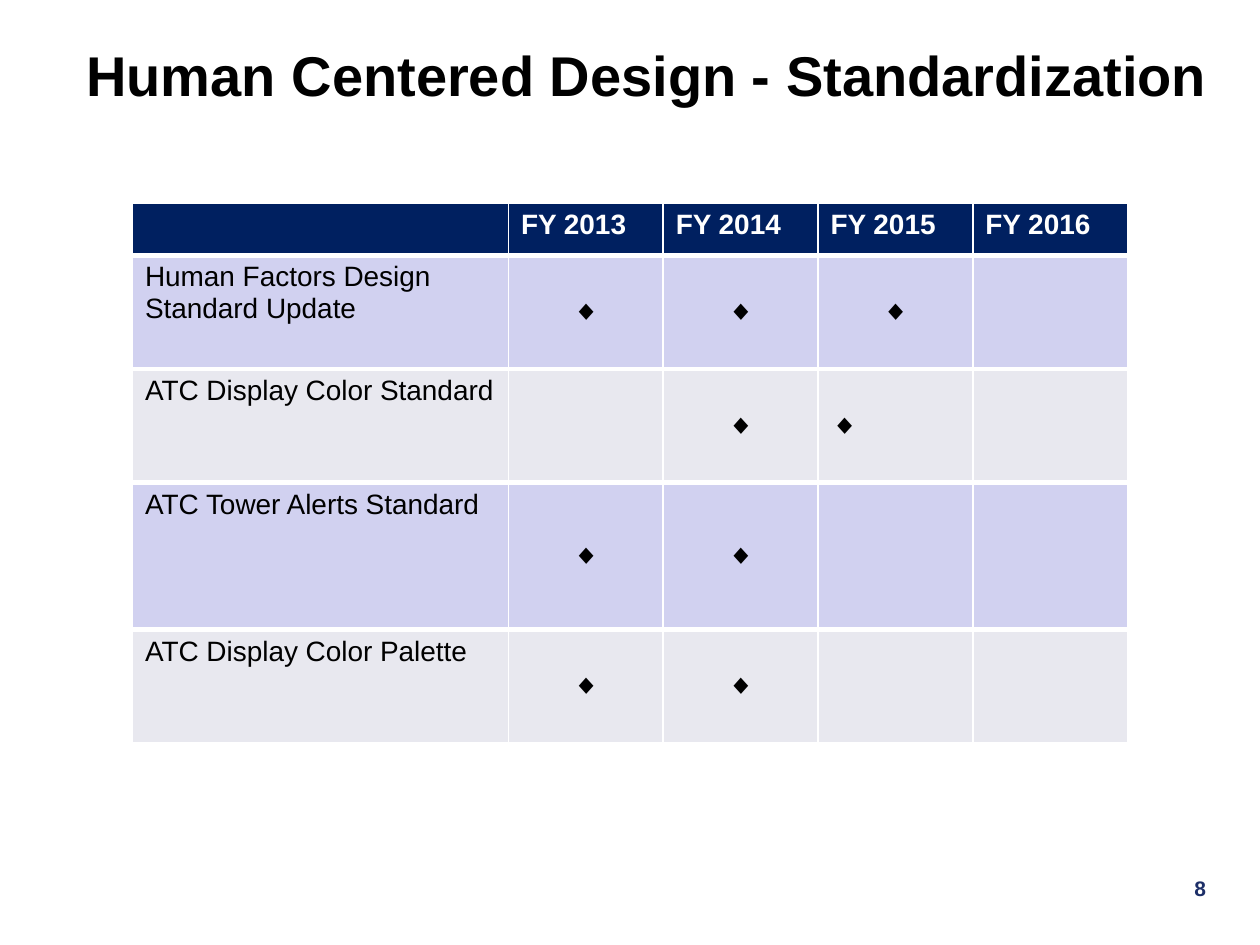
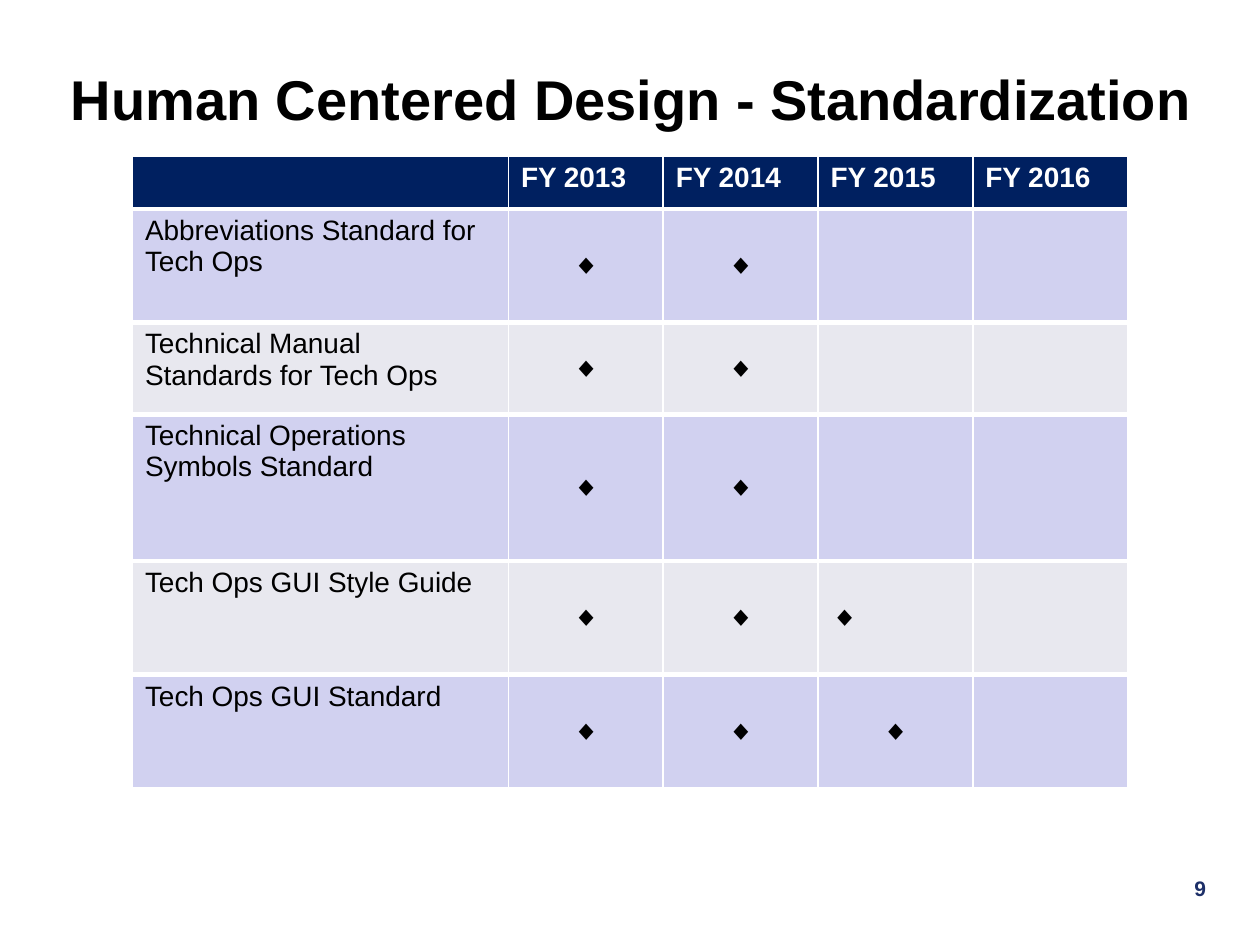
import dataclasses

import lxml.etree
import pptx
import pptx.dml.color
import pptx.enum.text
import pptx.oxml.ns
import pptx.presentation
import pptx.shapes.autoshape
import pptx.slide
import pptx.table
import pptx.text.text
import pptx.util

Cm = pptx.util.Cm
Align = pptx.enum.text.PP_ALIGN
Anchor = pptx.enum.text.MSO_ANCHOR

FONT = "Arial"
BLACK = "000000"
WHITE = "FFFFFF"
NAVY = "002060"
PAGE_BLUE = "1D2F68"
BANDS = ("D1D1F0", "E8E8EF")

TITLE = "Human Centered Design - Standardization"
HEADINGS = ("", "FY 2013", "FY 2014", "FY 2015", "FY 2016")
COLUMN_WIDTHS = (7.58, 3.12, 3.12, 3.12, 3.12)
HEADER_HEIGHT = 1.06
TABLE_LEFT = 2.67
MILESTONE = "◆"
MILESTONE_ALIGNMENT = {"c": Align.CENTER, "l": Align.LEFT, "j": Align.JUSTIFY}
THIN, THICK = 1, 3


@dataclasses.dataclass(frozen=True)
class Standard:
    name: str
    milestones: str
    height: float = 2.29


@dataclasses.dataclass(frozen=True)
class Schedule:
    page: int
    title_left: float
    title_top: float
    title_alignment: Align
    table_top: float
    standards: tuple[Standard, ...]


SCHEDULES = (
    Schedule(8, 1.27, 0.64, Align.CENTER, 4.09, (
        Standard("Human Factors Design Standard Update", "ccc-"),
        Standard("ATC Display Color Standard", "-cl-"),
        Standard("ATC Tower Alerts Standard", "cc--", 2.96),
        Standard("ATC Display Color Palette", "cc--"),
    )),
    Schedule(9, 1.17, 1.12, Align.LEFT, 3.15, (
        Standard("Abbreviations Standard for Tech Ops", "cc--"),
        Standard("Technical Manual Standards for Tech Ops", "cc--", 1.85),
        Standard("Technical Operations Symbols Standard", "cc--", 2.96),
        Standard("Tech Ops GUI Style Guide", "ccj-"),
        Standard("Tech Ops GUI Standard", "ccc-"),
    )),
)


def rgb(value: str) -> pptx.dml.color.RGBColor:
    return pptx.dml.color.RGBColor.from_string(value)


def write(frame: pptx.text.text.TextFrame, text: str, size: int, color: str,
          bold: bool, alignment: Align) -> None:
    frame.text = text
    paragraph = frame.paragraphs[0]
    paragraph.alignment = alignment
    font = paragraph.font
    font.name = FONT
    font.size = pptx.util.Pt(size)
    font.bold = bold
    font.color.rgb = rgb(color)


def draw_borders(cell: pptx.table._Cell, top: int, bottom: int) -> None:
    properties = cell._tc.get_or_add_tcPr()
    qn = pptx.oxml.ns.qn
    for side, width in (("L", THIN), ("R", THIN), ("T", top), ("B", bottom)):
        line = lxml.etree.SubElement(
            properties, qn(f"a:ln{side}"), w=str(pptx.util.Pt(width)))
        fill = lxml.etree.SubElement(line, qn("a:solidFill"))
        lxml.etree.SubElement(fill, qn("a:srgbClr"), val=WHITE)


def draw_cell(cell: pptx.table._Cell, text: str, fill: str, color: str = BLACK,
              bold: bool = False, alignment: Align = Align.LEFT,
              anchor: Anchor = Anchor.TOP, top: int = THICK,
              bottom: int = THICK) -> None:
    write(cell.text_frame, text, 16, color, bold, alignment)
    cell.vertical_anchor = anchor
    draw_borders(cell, top, bottom)
    cell.fill.solid()
    cell.fill.fore_color.rgb = rgb(fill)


def draw_title(slide: pptx.slide.Slide, schedule: Schedule) -> None:
    title = slide.shapes.title
    title.left, title.top = Cm(schedule.title_left), Cm(schedule.title_top)
    title.width, title.height = Cm(23.55), Cm(1.7)
    frame = title.text_frame
    frame.auto_size = pptx.enum.text.MSO_AUTO_SIZE.NONE
    frame.word_wrap = True
    frame.vertical_anchor = Anchor.MIDDLE
    write(frame, TITLE, 32, BLACK, True, schedule.title_alignment)


def draw_page_number(slide: pptx.slide.Slide, page: int) -> None:
    number = slide.shapes.add_textbox(Cm(19.28), Cm(17.53), Cm(5.28), Cm(1.27))
    number.text_frame.word_wrap = True
    write(number.text_frame, str(page), 12, PAGE_BLUE, True, Align.RIGHT)


def draw_timeline(slide: pptx.slide.Slide, schedule: Schedule) -> None:
    standards = schedule.standards
    heights = [HEADER_HEIGHT, *(standard.height for standard in standards)]
    timeline = slide.shapes.add_table(
        len(heights), len(HEADINGS), Cm(TABLE_LEFT), Cm(schedule.table_top),
        Cm(sum(COLUMN_WIDTHS)), Cm(sum(heights))).table
    for column, width in zip(timeline.columns, COLUMN_WIDTHS):
        column.width = Cm(width)
    for row, height in zip(timeline.rows, heights):
        row.height = Cm(height)
    for column, heading in enumerate(HEADINGS):
        draw_cell(timeline.cell(0, column), heading, NAVY, WHITE, True, top=THIN)
    for row, standard in enumerate(standards, 1):
        band = BANDS[(row - 1) % len(BANDS)]
        bottom = THIN if row == len(standards) else THICK
        draw_cell(timeline.cell(row, 0), standard.name, band, bottom=bottom)
        for year, mark in enumerate(standard.milestones, 1):
            draw_cell(timeline.cell(row, year), "" if mark == "-" else MILESTONE,
                      band, alignment=MILESTONE_ALIGNMENT.get(mark, Align.LEFT),
                      anchor=Anchor.MIDDLE, bottom=bottom)


def draw_schedule(deck: pptx.presentation.Presentation, schedule: Schedule) -> None:
    slide = deck.slides.add_slide(deck.slide_layouts.get_by_name("Title Only"))
    draw_title(slide, schedule)
    draw_timeline(slide, schedule)
    draw_page_number(slide, schedule.page)


def main() -> None:
    deck = pptx.Presentation()
    deck.slide_width, deck.slide_height = Cm(25.4), Cm(19.05)
    for schedule in SCHEDULES:
        draw_schedule(deck, schedule)
    deck.save("out.pptx")


if __name__ == "__main__":
    main()
